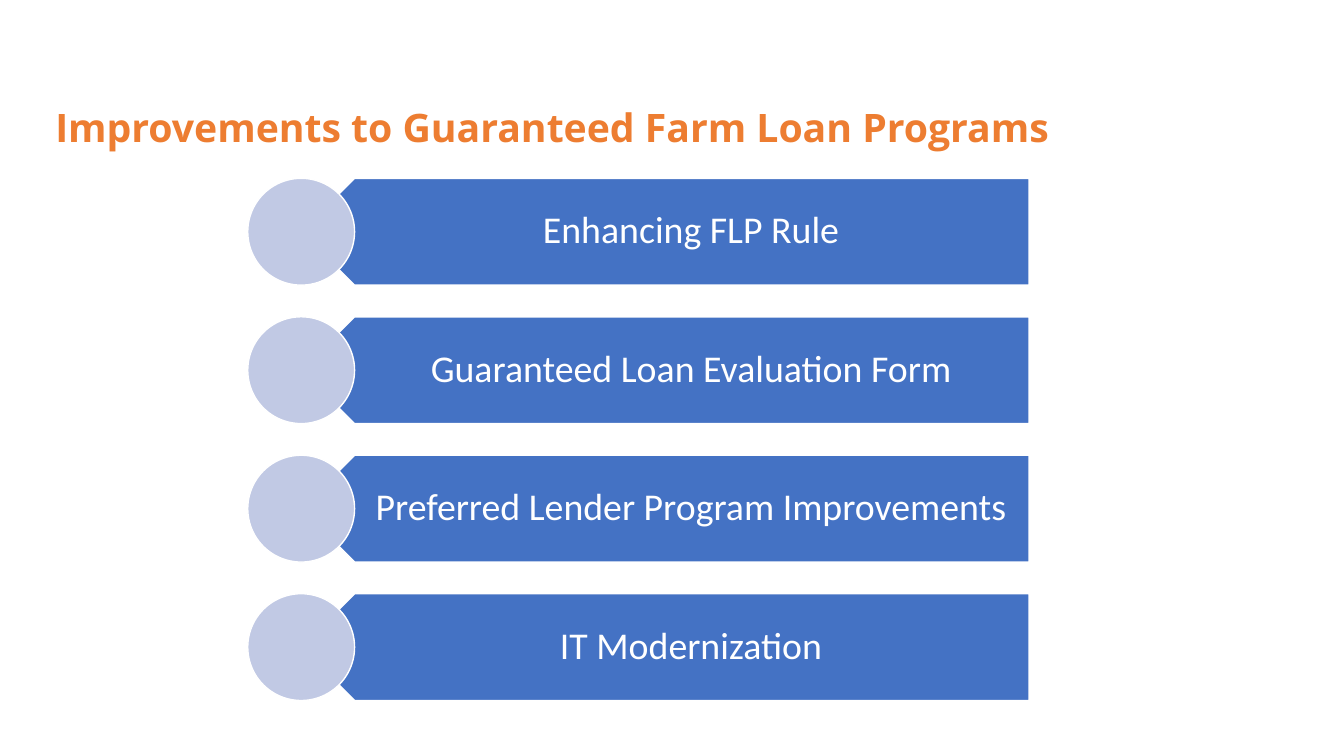
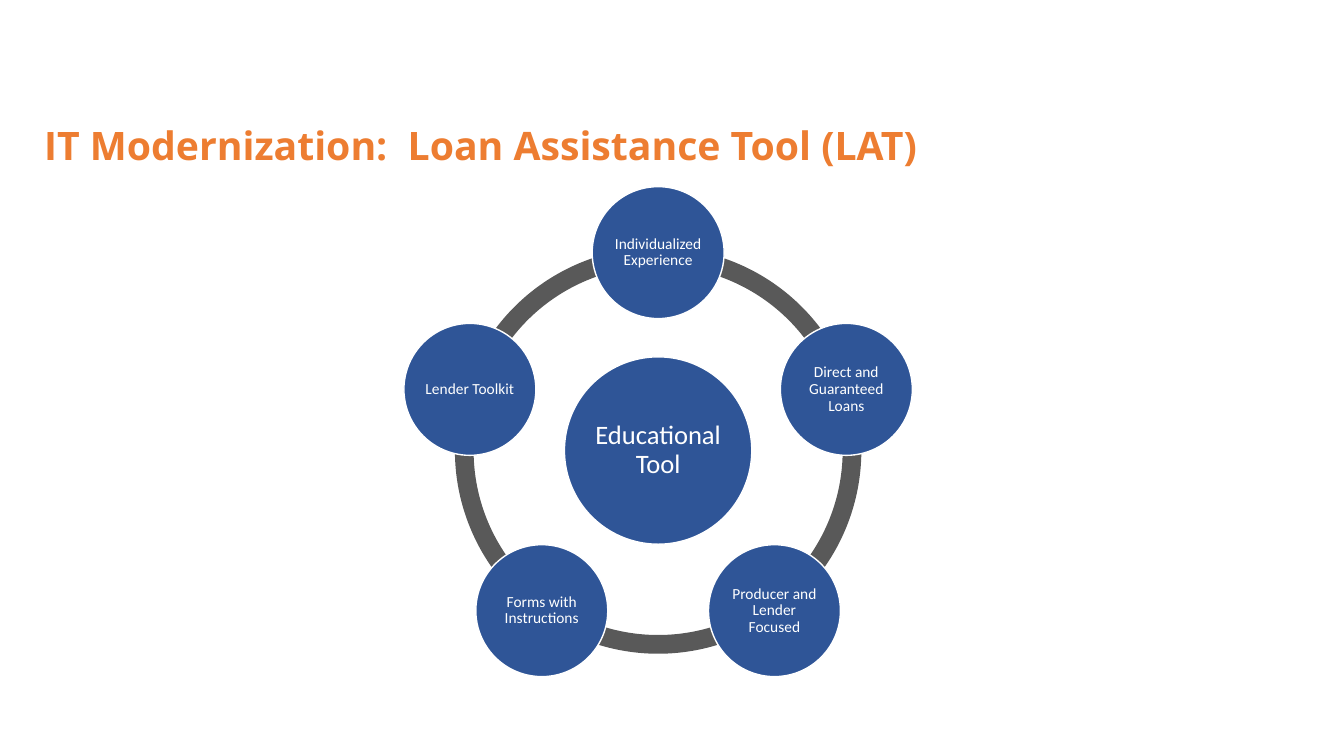
from math import cos, radians, sin

from lxml.etree import SubElement
from pptx import Presentation
from pptx.dml.color import RGBColor
from pptx.enum.shapes import MSO_SHAPE as Preset
from pptx.enum.text import MSO_ANCHOR as Anchor, PP_ALIGN as Align
from pptx.oxml.ns import qn
from pptx.util import Pt

ORANGE, BLUE, NAVY = "ED7D31", "4472C4", "2F5597"
PALE, WHITE, BLACK = "C1C9E4", "FFFFFF", "000000"
TITLE_FONT, BODY_FONT = "Open Sans", "Calibri"


def paint(color_format, value):
    """Set a colour from a hex string."""
    color_format.rgb = RGBColor.from_string(value)


def add_figure(page, preset, left, top, width, height, fill, line=WHITE):
    """Add a flat preset shape with an optional thin outline."""
    figure = page.shapes.add_shape(preset, Pt(left), Pt(top), Pt(width), Pt(height))
    figure.shadow.inherit = False
    figure.fill.solid()
    paint(figure.fill.fore_color, fill)
    if line:
        paint(figure.line.color, line)
        figure.line.width = Pt(1)
    else:
        figure.line.fill.background()
    return figure


def write(box, text, size, margins, font=BODY_FONT, color=WHITE, bold=False, align=Align.CENTER):
    """Fill a shape or text box with one vertically centred paragraph."""
    frame = box.text_frame
    frame.text = text
    frame.word_wrap = True
    frame.vertical_anchor = Anchor.MIDDLE
    frame.margin_left, frame.margin_top, frame.margin_right, frame.margin_bottom = map(Pt, margins)
    para = frame.paragraphs[0]
    para.alignment = align
    para.line_spacing = 0.9
    for span in para.runs:
        span.font.name, span.font.size, span.font.bold = font, Pt(size), bold
        paint(span.font.color, color)


def add_title(page, left, top, text):
    """Place the orange slide title."""
    box = page.shapes.add_textbox(Pt(left), Pt(top), Pt(746), Pt(54.7))
    write(box, text, 28, (7.2, 3.6, 7.2, 3.6), TITLE_FONT, ORANGE, True, Align.LEFT)


def add_tag_list(page, left, top, width, height, labels):
    """Stack evenly spaced tags, each led by a disc, within the box."""
    disc = 76.3
    pitch = (height - disc) / (len(labels) - 1)
    for index, label in enumerate(labels):
        row = top + index * pitch
        tag = add_figure(page, Preset.PENTAGON, left + disc / 2, row, width - disc / 2, disc, BLUE)
        tag.rotation = 180
        box = page.shapes.add_textbox(
            Pt(left + disc * 0.75), Pt(row), Pt(width - disc * 0.75), Pt(disc))
        write(box, label, 27, (33, 8, 15, 8))
        add_figure(page, Preset.OVAL, left, row, disc, disc, PALE)


def add_disc(page, center_x, center_y, diameter, text, size, margin):
    """Add a labelled navy disc around a centre point."""
    disc = add_figure(page, Preset.OVAL, center_x - diameter / 2, center_y - diameter / 2,
                      diameter, diameter, NAVY)
    write(disc, text, size, (margin,) * 4)


def add_cycle(page, left, top, size, hub, labels):
    """Arrange labelled discs clockwise on a ring around a hub in a square box."""
    node, ring = size * 0.25, size * 0.77
    orbit = (size - node) / 2
    center_x, center_y = left + size / 2, top + size / 2
    step = 360 / len(labels)
    angles = [(270 + index * step) % 360 for index in range(len(labels))]
    for angle in angles:
        arc = add_figure(page, Preset.BLOCK_ARC, center_x - ring / 2, center_y - ring / 2,
                         ring, ring, BLACK, None)
        arc.adjustments[0] = angle * 0.6
        arc.adjustments[1] = (angle + step) % 360 * 0.6
        arc.adjustments[2] = 0.046
        tint = arc.fill._xPr.find(qn("a:solidFill"))[0]
        SubElement(tint, qn("a:alpha")).set("val", "65000")
    add_disc(page, center_x, center_y, size * 0.355, hub, 19, 2)
    for angle, label in zip(angles, labels):
        turn = radians(angle)
        add_disc(page, center_x + orbit * cos(turn), center_y + orbit * sin(turn),
                 node, label, 11, 1.4)


def main():
    """Build and save the deck."""
    deck = Presentation()
    deck.slide_width, deck.slide_height = Pt(960), Pt(540)
    blank = deck.slide_layouts[6]

    page = deck.slides.add_slide(blank)
    add_title(page, 32.4, 65.5, "Improvements to Guaranteed Farm Loan Programs")
    add_tag_list(page, 177, 127.4, 558, 373, [
        "Enhancing FLP Rule",
        "Guaranteed Loan Evaluation Form",
        "Preferred Lender Program Improvements",
        "IT Modernization",
    ])

    page = deck.slides.add_slide(blank)
    add_title(page, 24.5, 78.5, "IT Modernization:  Loan Assistance Tool (LAT)")
    add_cycle(page, 281.6, 133.3, 377, "Educational Tool", [
        "Individualized Experience",
        "Direct and Guaranteed Loans",
        "Producer and Lender Focused",
        "Forms with Instructions",
        "Lender Toolkit",
    ])

    deck.save("out.pptx")


if __name__ == "__main__":
    main()
